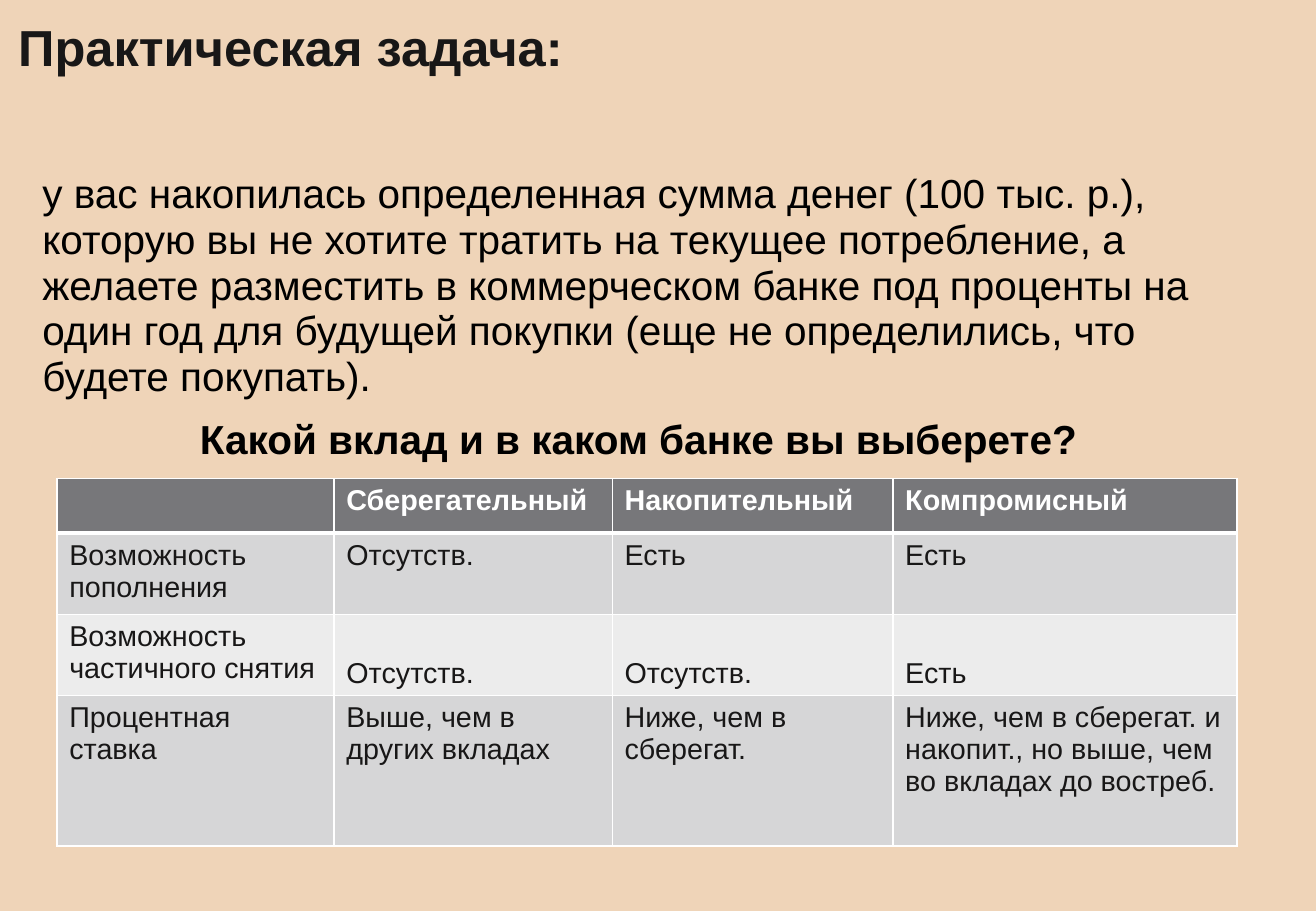
from lxml.etree import SubElement
from pptx import Presentation
from pptx.dml.color import RGBColor
from pptx.enum.text import MSO_ANCHOR, PP_ALIGN
from pptx.oxml.ns import qn
from pptx.util import Inches, Pt

HUES = {"back": "EFD4B8", "ink": "181717", "black": "000000", "white": "FFFFFF",
        "head": "77777A", "dark": "D6D6D7", "light": "ECECEC"}
TITLE = "Практическая задача:"
TASK = ("у вас накопилась определенная сумма денег (100 тыс. р.), которую вы не хотите "
        "тратить на текущее потребление, а желаете разместить в коммерческом банке под "
        "проценты на один год для будущей покупки (еще не определились, что будете покупать).")
ASK = "Какой вклад и в каком банке вы выберете?"
ROWS = [
    ["", "Сберегательный", "Накопительный", "Компромисный"],
    ["Возможность пополнения", "Отсутств.", "Есть", "Есть"],
    ["Возможность частичного снятия", "Отсутств.", "Отсутств.", "Есть"],
    ["Процентная ставка", "Выше, чем в других вкладах", "Ниже, чем в сберегат.",
     "Ниже, чем в сберегат. и накопит., но выше, чем во вкладах до востреб."],
]
WIDTHS = [2.28, 2.29, 2.31, 2.83]
HEIGHTS = [0.45, 0.63, 0.65, 1.24]
FILLS = ["head", "dark", "light", "dark"]


def tint(name):
    return RGBColor.from_string(HUES[name])


def style(para, size, hue, bold=False):
    for run in para.runs:
        font = run.font
        font.name, font.size, font.bold = "Arial", Pt(size), bold
        font.color.rgb = tint(hue)


def add_box(slide, left, top, width, height):
    box = slide.shapes.add_textbox(Inches(left), Inches(top), Inches(width), Inches(height))
    box.text_frame.word_wrap = True
    return box.text_frame


def add_title(slide):
    frame = add_box(slide, 0.15, 0.08, 9.66, 0.66)
    frame.margin_left = frame.margin_right = frame.margin_top = frame.margin_bottom = 0
    frame.vertical_anchor = MSO_ANCHOR.MIDDLE
    frame.text = TITLE
    frame.paragraphs[0].line_spacing = 0.9
    style(frame.paragraphs[0], 30, "ink", True)


def add_task(slide):
    frame = add_box(slide, 0.25, 1.37, 10.01, 2.45)
    frame.text = TASK
    ask = frame.add_paragraph()
    ask.text = ASK
    ask.alignment = PP_ALIGN.CENTER
    ask.space_before = Pt(10)
    for para in frame.paragraphs:
        para.line_spacing = 0.94
        style(para, 24, "black", para.text == ASK)


def add_edge(cell, side, width):
    line = SubElement(cell._tc.get_or_add_tcPr(), qn(f"a:ln{side}"), w=str(Pt(width)))
    fill = SubElement(line, qn("a:solidFill"))
    SubElement(fill, qn("a:srgbClr"), val=HUES["white"])


def fill_cell(cell, text, row):
    for side in "LRTB":
        thick = (row, side) in [(0, "B"), (1, "T")]
        add_edge(cell, side, 3 if thick else 1)
    cell.fill.solid()
    cell.fill.fore_color.rgb = tint(FILLS[row])
    cell.text = text
    style(cell.text_frame.paragraphs[0], 17, "ink" if row else "white", row == 0)


def add_grid(slide):
    table = slide.shapes.add_table(
        len(ROWS), len(WIDTHS), Inches(0.47), Inches(3.94),
        Inches(sum(WIDTHS)), Inches(sum(HEIGHTS))).table
    for col, width in zip(table.columns, WIDTHS):
        col.width = Inches(width)
    for row, texts in enumerate(ROWS):
        table.rows[row].height = Inches(HEIGHTS[row])
        for col, text in enumerate(texts):
            cell = table.cell(row, col)
            fill_cell(cell, text, row)
            if row == 2 and col:
                cell.vertical_anchor = MSO_ANCHOR.BOTTOM


def main():
    """Build the slide on choosing a bank deposit."""
    deck = Presentation()
    deck.slide_width, deck.slide_height = Inches(10.83), Inches(7.5)
    slide = deck.slides.add_slide(deck.slide_layouts[6])
    slide.background.fill.solid()
    slide.background.fill.fore_color.rgb = tint("back")
    add_title(slide)
    add_task(slide)
    add_grid(slide)
    deck.save("out.pptx")


if __name__ == "__main__":
    main()
